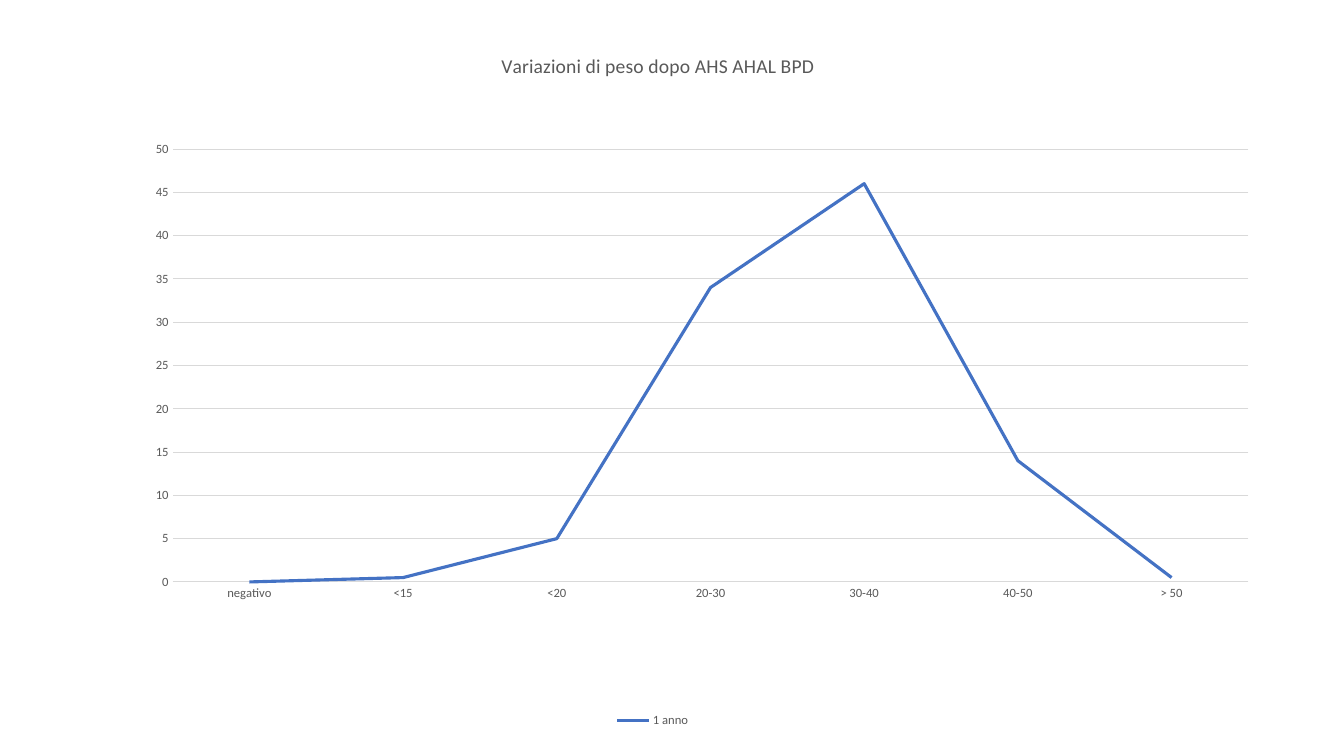
from lxml import etree
from pptx import Presentation, util as u
from pptx.chart.data import CategoryChartData
from pptx.dml.color import RGBColor
from pptx.enum import chart as ch
from pptx.oxml import parse_xml
from pptx.oxml.ns import nsdecls

PX = 914400 / 100.8
BLUE = RGBColor(0x44, 0x72, 0xC4)
GREY = RGBColor(0x59, 0x59, 0x59)
GRID = RGBColor(0xD9, 0xD9, 0xD9)


def px(n):
    return u.Emu(round(n * PX))


def manual_layout(target="", **fractions):
    """Return a c:layout element placed by fractions of the chart."""
    layout = parse_xml(f"<c:layout {nsdecls('c')}><c:manualLayout/></c:layout>")
    values = {"layoutTarget": target} if target else {}
    values.update(xMode="edge", yMode="edge", **fractions)
    for tag, val in values.items():
        etree.SubElement(layout[0], f"{{{layout.nsmap['c']}}}{tag}", val=str(val))
    return layout


prs = Presentation()
prs.slide_width, prs.slide_height = px(1344), px(756)
s = prs.slides.add_slide(prs.slide_layouts[6])

data = CategoryChartData()
data.categories = ["negativo", "<15", "<20", "20-30", "30-40", "40-50", "> 50"]
data.add_series("1 anno", [0, 0.5, 5, 34, 46, 14, 0.5])
chart = s.shapes.add_chart(
    ch.XL_CHART_TYPE.LINE, px(57), px(28), px(1192), px(704), data
).chart
chart.font.name = "Calibri"
chart.font.size = u.Pt(9)
chart.font.color.rgb = GREY

# Title
chart.has_title = True
tf = chart.chart_title.text_frame
tf.text = "Variazioni di peso dopo AHS AHAL BPD"
r = tf.paragraphs[0].runs[0]
r.font.name = "Calibri"
r.font.size = u.Pt(14)
r.font.bold = False
r.font.color.rgb = GREY
title = chart.chart_title._element
for old in title.findall("{*}layout"):
    title.remove(old)
title.find("{*}tx").addnext(manual_layout(x=0.37, y=0.03))

# Plot and series
plot = chart.plots[0]
plot.vary_by_categories = False
area = plot._element.getparent()
for old in area.findall("{*}layout"):
    area.remove(old)
area.insert(0, manual_layout("inner", x=0.097, y=0.172, w=0.903, h=0.615))
line = plot.series[0]
line.smooth = False
line.marker.style = ch.XL_MARKER_STYLE.NONE
line.format.line.color.rgb = BLUE
line.format.line.width = u.Pt(2.25)

# Axes
cat, val = chart.category_axis, chart.value_axis
for axis in (cat, val):
    axis.major_tick_mark = axis.minor_tick_mark = ch.XL_TICK_MARK.NONE
val.minimum_scale, val.maximum_scale, val.major_unit = 0, 50, 5
val.format.line.fill.background()
val.has_major_gridlines = True
for fmt in (cat.format, val.major_gridlines.format):
    fmt.line.color.rgb = GRID
    fmt.line.width = u.Pt(0.75)

# Legend
chart.has_legend = True
chart.legend.position = ch.XL_LEGEND_POSITION.BOTTOM
chart.legend.include_in_layout = False

prs.save("out.pptx")
